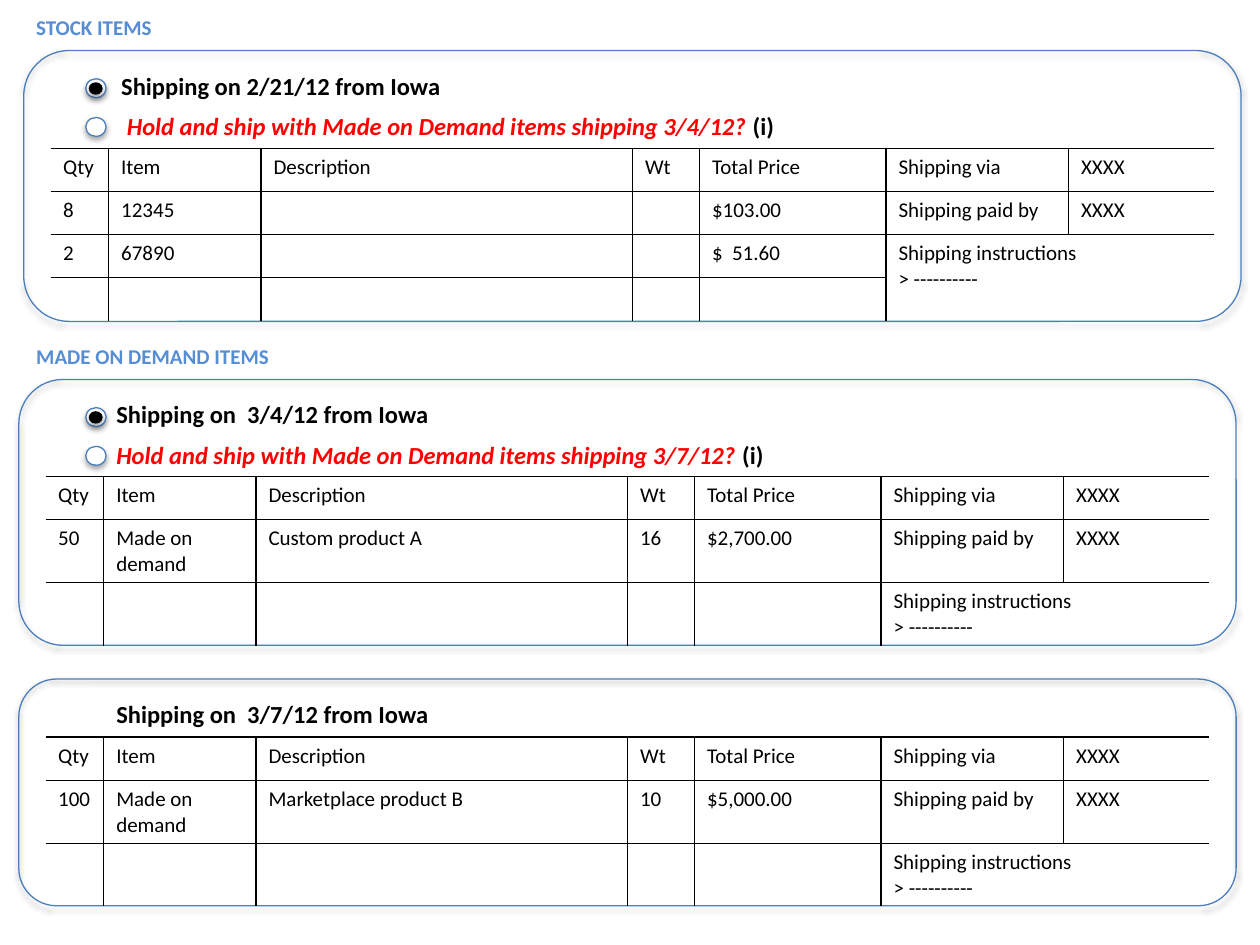
from lxml.etree import SubElement
from pptx import Presentation
from pptx.dml.color import RGBColor
from pptx.enum.shapes import MSO_SHAPE
from pptx.oxml import parse_xml
from pptx.oxml.ns import nsdecls, qn
from pptx.util import Cm, Pt

BLACK = RGBColor(0x00, 0x00, 0x00)
WHITE = RGBColor(0xFF, 0xFF, 0xFF)
RED = RGBColor(0xFF, 0x00, 0x00)
OUTLINE = RGBColor(0x4B, 0x7E, 0xBC)
HEADING = RGBColor(0x55, 0x8E, 0xD5)

NO_GRID_STYLE = "{2D5ABB26-0587-4C30-8999-92F81FD0307C}"
COL_WIDTHS = [1.17, 3.07, 7.49, 1.35, 3.76, 3.68, 2.93]
HEADER = ["Qty", "Item", "Description", "Wt", "Total Price", "Shipping via", "XXXX"]
PAID_BY = ["Shipping paid by", "XXXX"]
INSTRUCTIONS = ["Shipping instructions\n> ----------", ""]
EMPTY = [""] * 5

# left, top, height, heading, ship line, hold line, body rows, table height
PANELS = [
    (0.48, 1.02, 5.46, "STOCK ITEMS", "Shipping on 2/21/12 from Iowa",
     " Hold and ship with Made on Demand items shipping 3/4/12? ",
     [["8", "12345", "", "", "$103.00"] + PAID_BY,
      ["2", "67890", "", "", "$  51.60"] + INSTRUCTIONS,
      EMPTY + ["", ""]], 5.16),
    (0.38, 7.65, 5.36, "MADE ON DEMAND ITEMS", "Shipping on  3/4/12 from Iowa",
     "Hold and ship with Made on Demand items shipping 3/7/12? ",
     [["50", "Made on demand", "Custom product A", "16", "$2,700.00"] + PAID_BY,
      EMPTY + INSTRUCTIONS], 5.05),
    (0.38, 13.69, 4.57, None, "Shipping on  3/7/12 from Iowa", None,
     [["100", "Made on demand", "Marketplace product B", "10", "$5,000.00"] + PAID_BY,
      EMPTY + INSTRUCTIONS], 4.27),
]


def add_run(p, text, size=12, color=BLACK, bold=False, italic=False):
    r = p.add_run()
    r.text = text
    r.font.name = "Calibri"
    r.font.size = Pt(size)
    r.font.color.rgb = color
    r.font.bold = bold
    r.font.italic = italic


def add_outline(shapes, kind, left, top, width, height, fill=None, line=OUTLINE):
    """Add a shape in cm with the soft shadow that falls straight down."""
    sp = shapes.add_shape(kind, Cm(left), Cm(top), Cm(width), Cm(height))
    if fill is None:
        sp.fill.background()
    else:
        sp.fill.solid()
        sp.fill.fore_color.rgb = fill
    if line is None:
        sp.line.fill.background()
    else:
        sp.line.color.rgb = line
        sp.line.width = Pt(0.75)
    sp.shadow.inherit = False
    sp._element.spPr.find(qn("a:effectLst")).append(parse_xml(
        f'<a:outerShdw {nsdecls("a")} blurRad="40000" dist="23000" dir="5400000" '
        'rotWithShape="0"><a:srgbClr val="000000"><a:alpha val="35000"/>'
        '</a:srgbClr></a:outerShdw>'))


prs = Presentation()
prs.slide_width, prs.slide_height = Cm(25.4), Cm(19.05)
s = prs.slides.add_slide(prs.slide_layouts[6])

for left, top, height, heading, ship, hold, body, table_height in PANELS:
    add_outline(s.shapes, MSO_SHAPE.ROUNDED_RECTANGLE, left, top, 24.54, height)

    rows = [[""] * 7, HEADER] + body
    last = len(rows) - 1
    frame = s.shapes.add_table(len(rows), 7, Cm(left + 0.54), Cm(top + 0.3),
                               Cm(sum(COL_WIDTHS)), Cm(table_height))
    table = frame.table
    table.first_row = table.horz_banding = False
    table._tbl.tblPr.find(qn("a:tableStyleId")).text = NO_GRID_STYLE
    for col, width in zip(table.columns, COL_WIDTHS):
        col.width = Cm(width)
    for row in table.rows:
        row.height = Cm(0.87)
    frame.height = Cm(table_height)

    table.cell(0, 1).merge(table.cell(0, 6))
    table.cell(3, 5).merge(table.cell(last, 6))

    for i, values in enumerate(rows):
        for j, value in enumerate(values):
            cell = table.cell(i, j)
            in_instructions = i >= 3 and j >= 5
            sides = {
                "lnL": i > 0 and 1 <= j <= 5,
                "lnR": i > 0 and j < 5,
                "lnT": i > 0 and not (in_instructions and i > 3),
                "lnB": i < last and not in_instructions,
            }
            tcPr = cell._tc.get_or_add_tcPr()
            for side, shown in sides.items():
                if shown:
                    tcPr.append(parse_xml(
                        f'<a:{side} {nsdecls("a")} w="12700"><a:solidFill>'
                        f'<a:srgbClr val="{BLACK}"/></a:solidFill></a:{side}>'))
            cell.fill.background()
            tf = cell.text_frame
            if (i, j) == (0, 1):
                p = tf.paragraphs[0]
                p.space_after = Pt(6)
                add_run(p, ship, 14, bold=True)
                if hold:
                    p = tf.add_paragraph()
                    p.space_after = Pt(6)
                    add_run(p, hold, 14, RED, bold=True, italic=True)
                    add_run(p, "(i)", 14, bold=True)
            elif value:
                for n, line in enumerate(value.split("\n")):
                    add_run(tf.add_paragraph() if n else tf.paragraphs[0], line)
            else:
                SubElement(tf.paragraphs[0]._p, qn("a:endParaRPr")).set("sz", "1200")

    if hold:
        radio = s.shapes.add_group_shape()
        add_outline(radio.shapes, MSO_SHAPE.OVAL, 1.73, top + 0.57, 0.41, 0.38, WHITE)
        add_outline(radio.shapes, MSO_SHAPE.OVAL, 1.79, top + 0.64, 0.28, 0.25, BLACK, None)
        add_outline(s.shapes, MSO_SHAPE.OVAL, 1.73, top + 1.35, 0.41, 0.38, WHITE)

    if heading:
        tb = s.shapes.add_textbox(Cm(0.48), Cm(top - 0.85), Cm(15.52), Cm(0.76))
        tb.text_frame.word_wrap = True
        add_run(tb.text_frame.paragraphs[0], heading, color=HEADING, bold=True)

prs.save("out.pptx")
